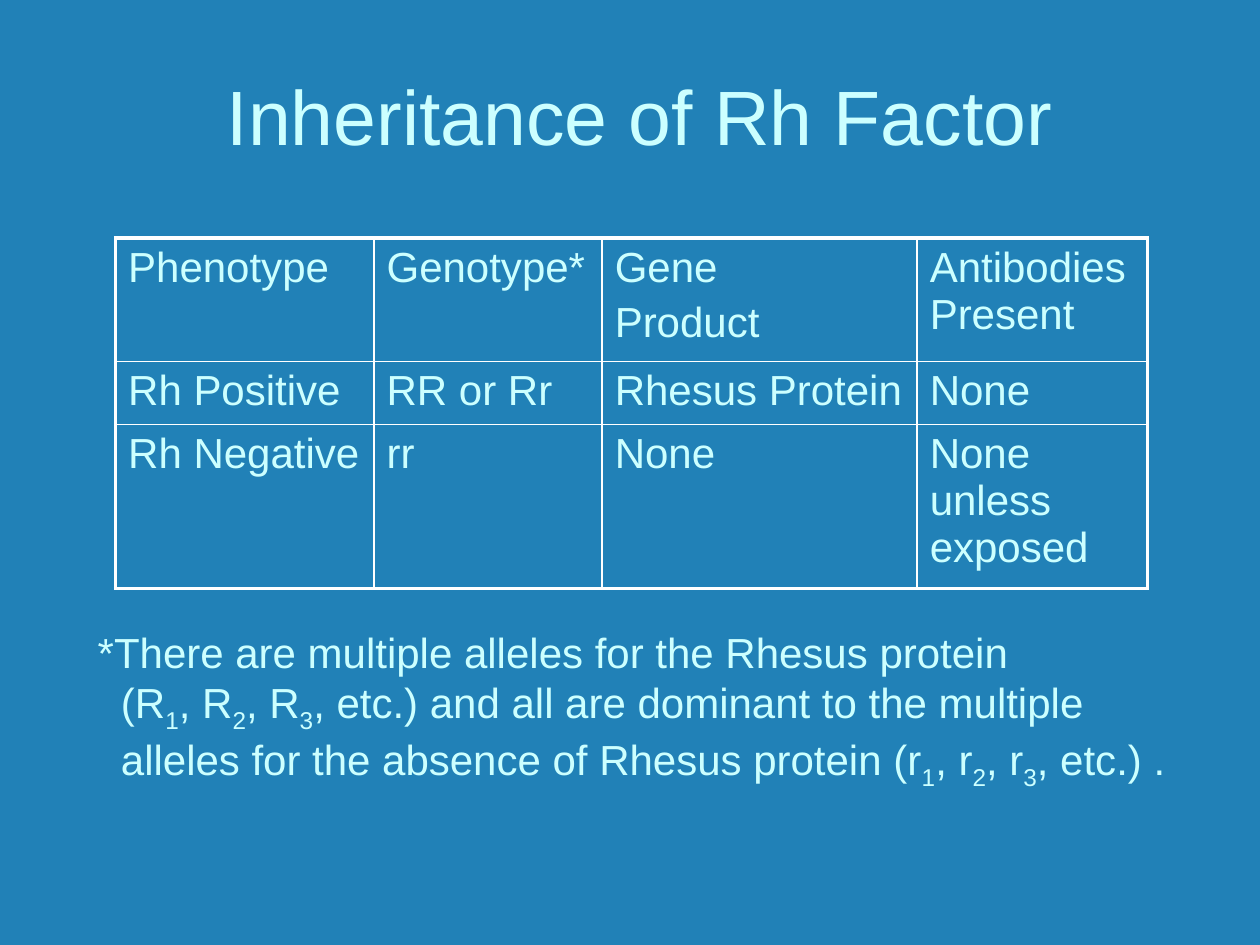
from typing import NamedTuple

from lxml.etree import SubElement
from pptx import Presentation
from pptx.dml.color import RGBColor
from pptx.enum.text import MSO_ANCHOR, MSO_AUTO_SIZE, PP_ALIGN
from pptx.oxml.ns import qn
from pptx.util import Cm, Pt

BACKGROUND = "2181B7"
TEXT = "CCFFFF"
BORDER = "FFFFFF"
FONT = "Arial"
INNER, OUTER = 1, 2.25


class Box(NamedTuple):
    left: float
    top: float
    width: float
    height: float


class Run(NamedTuple):
    text: str
    subscript: bool = False


class Line(NamedTuple):
    runs: list[Run]
    indent: float = 0


TITLE_BOX = Box(2.11, 1.27, 21.59, 2.11)
TABLE_BOX = Box(2.33, 4.8, 20.8, 7.06)
NOTE_BOX = Box(1.72, 12.5, 22.15, 3.3)
COL_WIDTHS = [5.21, 4.6, 6.35, 4.64]
ROW_HEIGHTS = [2.49, 1.27, 3.3]
ROWS = [
    [["Phenotype"], ["Genotype*"], ["Gene", "Product"], ["Antibodies Present"]],
    [["Rh Positive"], ["RR or Rr"], ["Rhesus Protein"], ["None"]],
    [["Rh Negative"], ["rr"], ["None"], ["None unless exposed"]],
]


def allele_runs(start: str, allele: str, end: str) -> list[Run]:
    runs = [Run(f"{start}({allele}")]
    for number in "123":
        follow = end if number == "3" else f", {allele}"
        runs += [Run(number, True), Run(follow)]
    return runs


NOTE = [
    Line([Run("*There are multiple alleles for the Rhesus protein")]),
    Line(allele_runs("", "R", ", etc.) and all are dominant to the multiple"), 0.47),
    Line(allele_runs("alleles for the absence of Rhesus protein ", "r", ", etc.) ."), 0.47),
]


def color(value: str) -> RGBColor:
    return RGBColor.from_string(value)


def lengths(box: Box) -> list[Cm]:
    return [Cm(value) for value in box]


def add_run(p, run: Run, size: float = 24) -> None:
    r = p.add_run()
    r.text = run.text
    r.font.name = FONT
    r.font.size = Pt(size)
    r.font.color.rgb = color(TEXT)
    if run.subscript:
        r.font._element.set("baseline", "-25000")


def add_lines(tf, lines: list[Line], gap: float = 0) -> None:
    for i, line in enumerate(lines):
        p = tf.add_paragraph() if i else tf.paragraphs[0]
        if i and gap:
            p.space_before = Pt(gap)
        if line.indent:
            p._p.get_or_add_pPr().set("marL", str(Cm(line.indent)))
        for run in line.runs:
            add_run(p, run)


def set_border(cell, side: str, width: float) -> None:
    ln = SubElement(cell._tc.get_or_add_tcPr(), qn(f"a:ln{side}"), w=str(Pt(width)))
    fill = SubElement(ln, qn("a:solidFill"))
    SubElement(fill, qn("a:srgbClr"), val=BORDER)


def add_title(s, text: str) -> None:
    sp = s.shapes.title
    sp.left, sp.top, sp.width, sp.height = lengths(TITLE_BOX)
    tf = sp.text_frame
    tf.word_wrap = True
    tf.auto_size = MSO_AUTO_SIZE.NONE
    tf.vertical_anchor = MSO_ANCHOR.BOTTOM
    p = tf.paragraphs[0]
    p.alignment = PP_ALIGN.CENTER
    add_run(p, Run(text), 44)


def add_phenotype_table(s) -> None:
    n_rows, n_cols = len(ROWS), len(COL_WIDTHS)
    table = s.shapes.add_table(n_rows, n_cols, *lengths(TABLE_BOX)).table
    table.first_row = False
    table.horz_banding = False
    for col, width in zip(table.columns, COL_WIDTHS):
        col.width = Cm(width)
    for row, height in zip(table.rows, ROW_HEIGHTS):
        row.height = Cm(height)
    for i, row in enumerate(ROWS):
        for j, texts in enumerate(row):
            cell = table.cell(i, j)
            edges = {"L": j == 0, "R": j == n_cols - 1, "T": i == 0, "B": i == n_rows - 1}
            for side, is_outer in edges.items():
                set_border(cell, side, OUTER if is_outer else INNER)
            cell.fill.background()
            add_lines(cell.text_frame, [Line([Run(text)]) for text in texts], gap=4.8)


def add_note(s) -> None:
    tf = s.shapes.add_textbox(*lengths(NOTE_BOX)).text_frame
    tf.word_wrap = True
    add_lines(tf, NOTE)


def main() -> None:
    prs = Presentation()
    prs.slide_width, prs.slide_height = Cm(25.4), Cm(19.05)
    s = prs.slides.add_slide(prs.slide_layouts[5])
    s.background.fill.solid()
    s.background.fill.fore_color.rgb = color(BACKGROUND)
    add_title(s, "Inheritance of Rh Factor")
    add_phenotype_table(s)
    add_note(s)
    prs.save("out.pptx")


if __name__ == "__main__":
    main()
